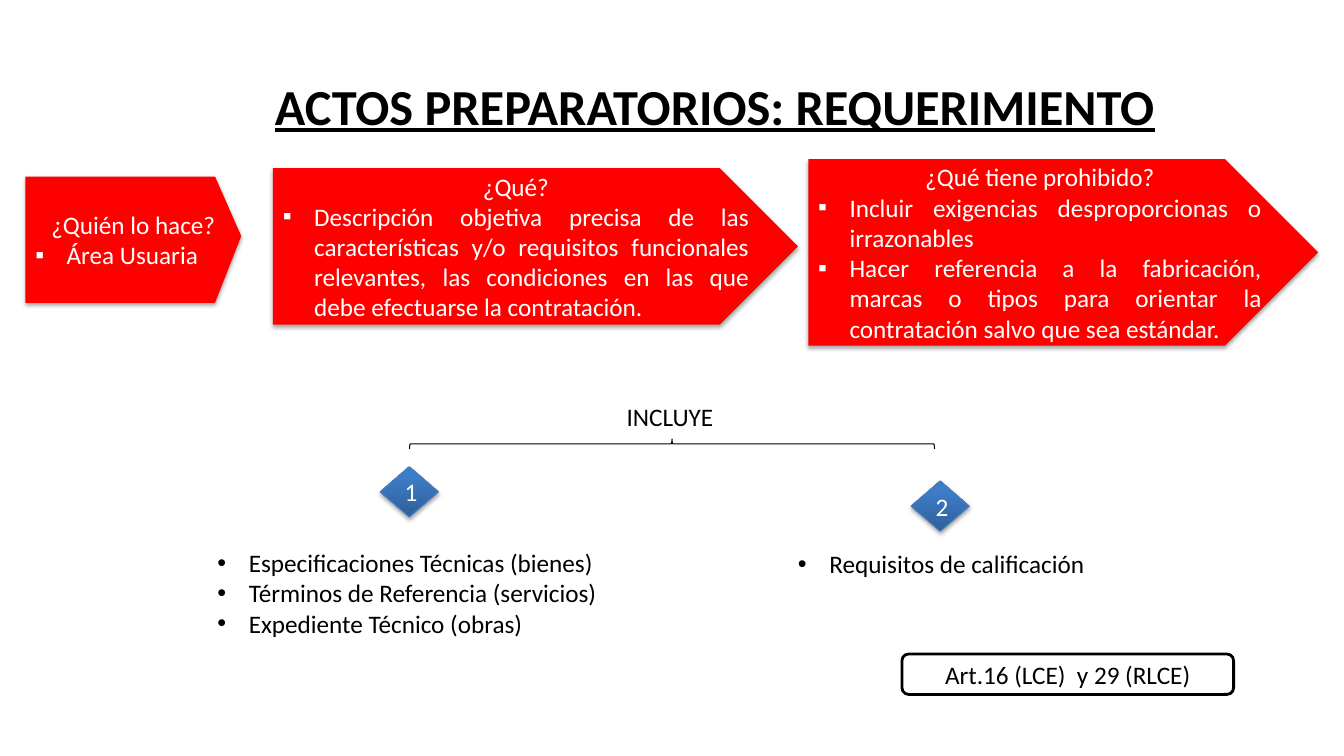
from copy import deepcopy
from dataclasses import dataclass

from lxml import etree
from pptx import Presentation
from pptx.dml.color import RGBColor
from pptx.enum.shapes import MSO_SHAPE
from pptx.enum.text import MSO_ANCHOR, MSO_AUTO_SIZE, PP_ALIGN
from pptx.oxml.ns import qn
from pptx.util import Cm, Pt

PENTAGON = MSO_SHAPE.PENTAGON
DIAMOND = MSO_SHAPE.FLOWCHART_DECISION
BRACE = MSO_SHAPE.LEFT_BRACE
ROUNDED = MSO_SHAPE.ROUNDED_RECTANGLE
LEFT, CENTER, JUSTIFY = PP_ALIGN.LEFT, PP_ALIGN.CENTER, PP_ALIGN.JUSTIFY
TOP, MIDDLE = MSO_ANCHOR.TOP, MSO_ANCHOR.MIDDLE


@dataclass(frozen=True)
class Theme:
    font: str = "Calibri"
    title: int = 36
    body: int = 18
    black: RGBColor = RGBColor(0, 0, 0)
    white: RGBColor = RGBColor(255, 255, 255)
    red: RGBColor = RGBColor(255, 0, 0)
    diamond_line: RGBColor = RGBColor(0x4B, 0x7E, 0xBC)
    diamond_stops: tuple = ((0, "2F5F99"), (0.8, "3D7CC7"), (1, "3A7CCB"))


THEME = Theme()


# Shared helpers
def format_runs(p, size, color, align):
    p.alignment = align
    for r in p.runs:
        r.font.name = THEME.font
        r.font.size = Pt(size)
        r.font.color.rgb = color


def add_bullet(p, char):
    pPr = p._p.get_or_add_pPr()
    pPr.set("marL", str(Cm(0.79)))
    pPr.set("indent", str(-Cm(0.79)))
    etree.SubElement(pPr, qn("a:buFont")).set("typeface", "Arial")
    etree.SubElement(pPr, qn("a:buChar")).set("char", char)


def write(sp, color, heading=None, bullets=(), char="•", bullet_align=LEFT,
          heading_align=CENTER, anchor=MIDDLE):
    tf = sp.text_frame
    tf.word_wrap = True
    tf.vertical_anchor = anchor
    lines = ([heading] if heading else []) + list(bullets)
    tf.text = "\n".join(lines)
    for i, p in enumerate(tf.paragraphs):
        is_heading = heading is not None and i == 0
        if not is_heading:
            add_bullet(p, char)
        format_runs(p, THEME.body, color,
                    heading_align if is_heading else bullet_align)


def add_shadow(sp):
    sp.shadow.inherit = False
    effects = sp._element.spPr.find(qn("a:effectLst"))
    shadow = etree.SubElement(effects, qn("a:outerShdw"), blurRad=str(Pt(3.1)),
                              dist=str(Pt(1.8)), dir="5400000", rotWithShape="0")
    black = etree.SubElement(shadow, qn("a:srgbClr"), val="000000")
    etree.SubElement(black, qn("a:alpha"), val="35000")


# Title
def add_title(slide, text, x, y, w, h):
    sp = slide.shapes.title
    sp.left, sp.top, sp.width, sp.height = Cm(x), Cm(y), Cm(w), Cm(h)
    tf = sp.text_frame
    tf.auto_size = MSO_AUTO_SIZE.NONE
    tf.margin_left = Cm(0.28)
    tf.margin_right = tf.margin_top = tf.margin_bottom = 0
    tf.vertical_anchor = TOP
    tf.text = text
    p = tf.paragraphs[0]
    format_runs(p, THEME.title, THEME.black, LEFT)
    p.runs[0].font.bold = p.runs[0].font.underline = True


# Red question arrows
def fill_question(sp, heading, bullets):
    sp.fill.solid()
    sp.fill.fore_color.rgb = THEME.red
    sp.line.fill.background()
    add_shadow(sp)
    write(sp, THEME.white, heading, bullets, "▪", JUSTIFY)


def add_who_arrow(slide, heading, bullets, x, y, w, h):
    shoulder = x + w - 0.66
    outline = slide.shapes.build_freeform(Cm(x), Cm(y), scale=1.0)
    corners = [(shoulder, y), (x + w, y + 1.5), (shoulder, y + h), (x, y + h)]
    outline.add_line_segments([(Cm(cx), Cm(cy)) for cx, cy in corners])
    fill_question(outline.convert_to_shape(), heading, bullets)


def add_arrow(slide, heading, bullets, x, y, w, h):
    sp = slide.shapes.add_shape(PENTAGON, Cm(x), Cm(y), Cm(w), Cm(h))
    fill_question(sp, heading, bullets)


# Brace with its label above; the box is the brace as seen
def add_brace(slide, label, x, y, w, h):
    left, top = x + (w - h) / 2, y + (h - w) / 2
    sp = slide.shapes.add_shape(BRACE, Cm(left), Cm(top), Cm(h), Cm(w))
    sp.rotation = 90
    sp.shadow.inherit = False
    sp.fill.background()
    sp.line.color.rgb = THEME.black
    sp.line.width = Pt(0.75)
    label_box = slide.shapes.add_textbox(Cm(x + 5.22), Cm(y - 1.08), Cm(3.18), Cm(1.02))
    write(label_box, THEME.black, label, heading_align=LEFT, anchor=TOP)


# Numbered diamond
def add_diamond(slide, number, x, y, w=1.47, h=1.27):
    sp = slide.shapes.add_shape(DIAMOND, Cm(x), Cm(y), Cm(w), Cm(h))
    sp.fill.gradient()
    sp.fill.gradient_angle = 90
    stop_list = sp.fill._fill._gradFill.gsLst
    stop_list.append(deepcopy(stop_list[-1]))
    for stop, (position, color) in zip(sp.fill.gradient_stops, THEME.diamond_stops):
        stop.position = position
        stop.color.rgb = RGBColor.from_string(color)
    sp.line.color.rgb = THEME.diamond_line
    sp.line.width = Pt(0.75)
    add_shadow(sp)
    write(sp, THEME.white, number)


# Bulleted list below a diamond
def add_list(slide, items, x, y, w, h):
    sp = slide.shapes.add_textbox(Cm(x), Cm(y), Cm(w), Cm(h))
    write(sp, THEME.black, bullets=items, anchor=TOP)


# Legal reference
def add_reference(slide, text, x, y, w, h):
    sp = slide.shapes.add_shape(ROUNDED, Cm(x), Cm(y), Cm(w), Cm(h))
    sp.shadow.inherit = False
    sp.fill.solid()
    sp.fill.fore_color.rgb = THEME.white
    sp.line.color.rgb = THEME.black
    sp.line.width = Pt(2)
    write(sp, THEME.black, text)


def main():
    prs = Presentation()
    prs.slide_width, prs.slide_height = Cm(33.87), Cm(19.05)
    slide = prs.slides.add_slide(prs.slide_layouts[5])

    add_title(slide, "ACTOS PREPARATORIOS: REQUERIMIENTO", 6.65, 1.88, 25.3, 1.9)

    add_brace(slide, "INCLUYE", 10.32, 11.06, 13.23, 0.25)
    add_list(slide, ["Especificaciones Técnicas (bienes)",
                     "Términos de Referencia (servicios)",
                     "Expediente Técnico (obras)"], 5.23, 13.67, 10.16, 2.57)
    add_list(slide, ["Requisitos de calificación"], 19.86, 13.69, 8.36, 1.02)
    add_diamond(slide, "1", 9.58, 11.76)
    add_diamond(slide, "2", 22.96, 12.12)

    add_who_arrow(slide, "¿Quién lo hace?", ["Área Usuaria"], 0.64, 4.45, 5.44, 3.18)
    add_arrow(slide, "¿Qué?",
              ["Descripción objetiva precisa de las características y/o requisitos "
               "funcionales relevantes, las condiciones en las que debe efectuarse "
               "la contratación."], 6.88, 4.24, 13.23, 3.94)
    add_reference(slide, "Art.16 (LCE)  y 29 (RLCE)", 22.73, 16.48, 8.36, 1.02)
    add_arrow(slide, "¿Qué tiene prohibido?",
              ["Incluir exigencias desproporcionas o irrazonables",
               "Hacer referencia a la fabricación, marcas o tipos para orientar la "
               "contratación salvo que sea estándar."], 20.37, 4.01, 12.85, 4.7)

    prs.save("out.pptx")


if __name__ == "__main__":
    main()
